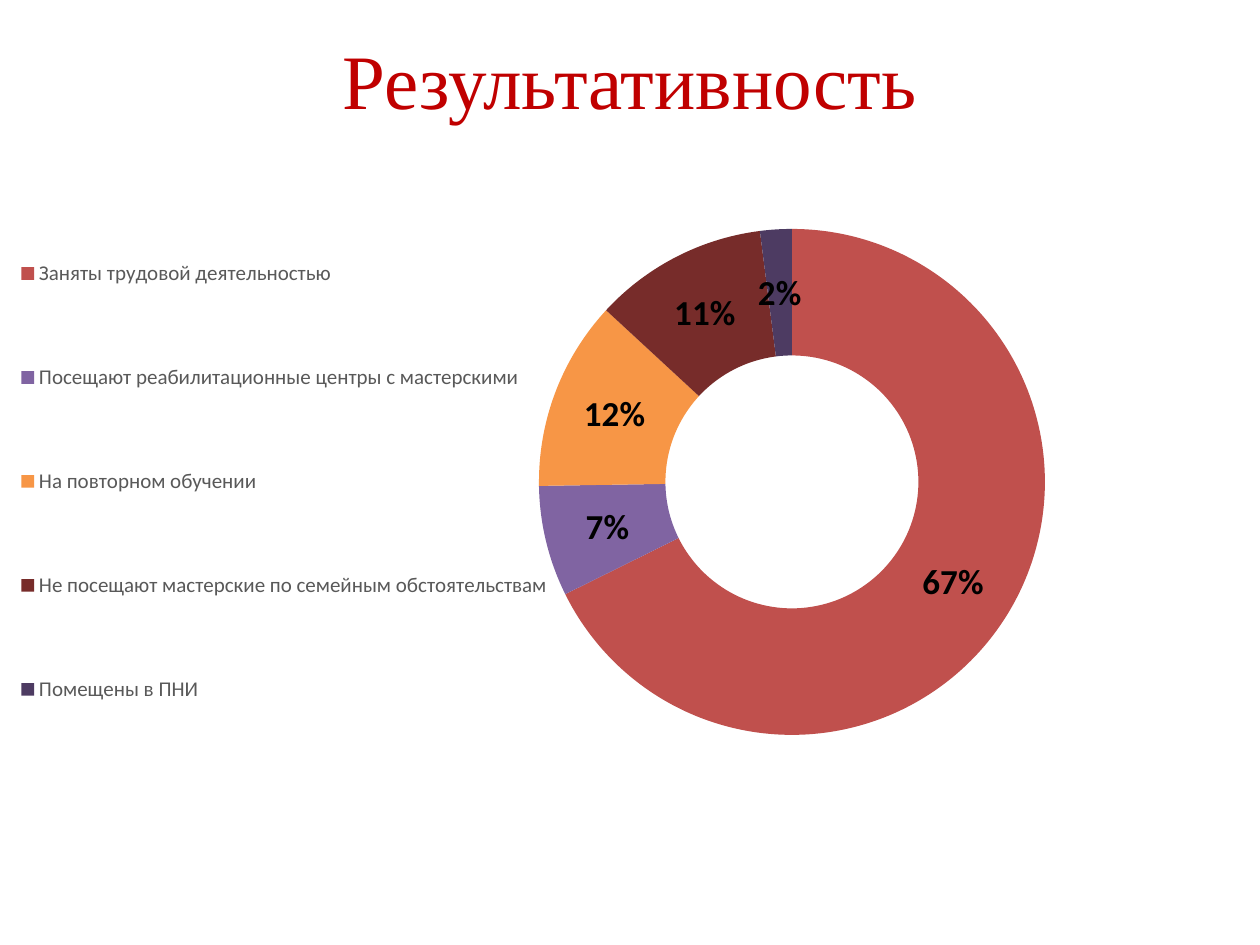
from lxml import etree
from pptx import Presentation
from pptx.chart.data import CategoryChartData
from pptx.dml.color import RGBColor
from pptx.enum.chart import XL_CHART_TYPE, XL_LEGEND_POSITION
from pptx.enum.text import MSO_ANCHOR, PP_ALIGN
from pptx.oxml.ns import qn
from pptx.util import Inches, Pt

PX = Inches(1) / 126
DOUGHNUT = XL_CHART_TYPE.DOUGHNUT
TOP = XL_LEGEND_POSITION.TOP
MIDDLE = MSO_ANCHOR.MIDDLE
CENTER = PP_ALIGN.CENTER

TITLE_RED = RGBColor(0xC0, 0x00, 0x00)
LEGEND_GREY = RGBColor(0x59, 0x59, 0x59)
BLACK = RGBColor(0x00, 0x00, 0x00)

CHART_WIDTH, CHART_HEIGHT = 1225, 747

# Category, percentage, ring colour
OUTCOMES = [
    ("Заняты трудовой деятельностью", 67, RGBColor(0xC0, 0x50, 0x4D)),
    ("Посещают реабилитационные центры с мастерскими", 7, RGBColor(0x80, 0x64, 0xA2)),
    ("На повторном обучении", 12, RGBColor(0xF7, 0x96, 0x46)),
    ("Не посещают мастерские по семейным обстоятельствам", 11, RGBColor(0x77, 0x2C, 0x2A)),
    ("Помещены в ПНИ", 2, RGBColor(0x4D, 0x3B, 0x62)),
]


def px(*lengths):
    return [round(length * PX) for length in lengths]


def set_font(font, name, size, color, bold=False):
    font.name = name
    font.size = Pt(size)
    font.color.rgb = color
    font.bold = bold


def add_title(page, text):
    box = page.shapes.add_textbox(*px(87, 20, 1086, 118))
    frame = box.text_frame
    frame.word_wrap = True
    frame.vertical_anchor = MIDDLE
    para = frame.paragraphs[0]
    para.text = text
    para.alignment = CENTER
    set_font(para.font, "Times New Roman", 44, TITLE_RED)


def set_layout(parent, index, left, top, width, height, inner=False):
    """Place a chart part, in px from the chart's top left corner."""
    for old in parent.findall(qn("c:layout")):
        parent.remove(old)
    layout = etree.Element(qn("c:layout"))
    manual = etree.SubElement(layout, qn("c:manualLayout"))
    settings = [("xMode", "edge"), ("yMode", "edge"),
                ("x", left / CHART_WIDTH), ("y", top / CHART_HEIGHT),
                ("w", width / CHART_WIDTH), ("h", height / CHART_HEIGHT)]
    if inner:
        settings.insert(0, ("layoutTarget", "inner"))
    for tag, value in settings:
        etree.SubElement(manual, qn(f"c:{tag}")).set("val", str(value))
    parent.insert(index, layout)


def add_ring_chart(page, outcomes):
    names, shares, colors = zip(*outcomes)
    data = CategoryChartData()
    data.categories = names
    data.add_series("Series 1", shares)
    place = px(10, 137, CHART_WIDTH, CHART_HEIGHT)
    chart = page.shapes.add_chart(DOUGHNUT, *place, data).chart
    chart.has_title = False
    set_font(chart.font, "Calibri", 10, BLACK)

    # Ring segments
    plot = chart.plots[0]
    plot.vary_by_categories = True
    for index, color in enumerate(colors):
        segment = plot.series[0].points[index].format
        segment.fill.solid()
        segment.fill.fore_color.rgb = color
        segment.line.fill.background()

    # Labels: the shares are already rounded percentages
    labels = plot.series[0].data_labels
    labels.show_value = True
    labels.show_percentage = False
    labels.number_format = '0"%"'
    labels.number_format_is_linked = False
    set_font(labels.font, "Calibri", 20, BLACK, bold=True)

    # Legend on the left, ring on the right
    chart.has_legend = True
    legend = chart.legend
    legend.position = TOP
    legend.include_in_layout = False
    set_font(legend.font, "Calibri", 12, LEGEND_GREY)
    set_layout(legend._element, 1, 5, 45, 539, 599)
    plot_area = chart._chartSpace.find(".//" + qn("c:plotArea"))
    set_layout(plot_area, 0, 529, 19, 506, 652, inner=True)


def main():
    deck = Presentation()
    deck.slide_width, deck.slide_height = px(1260, 945)
    page = deck.slides.add_slide(deck.slide_layouts[6])
    add_ring_chart(page, OUTCOMES)
    add_title(page, "Результативность")
    deck.save("out.pptx")


if __name__ == "__main__":
    main()
